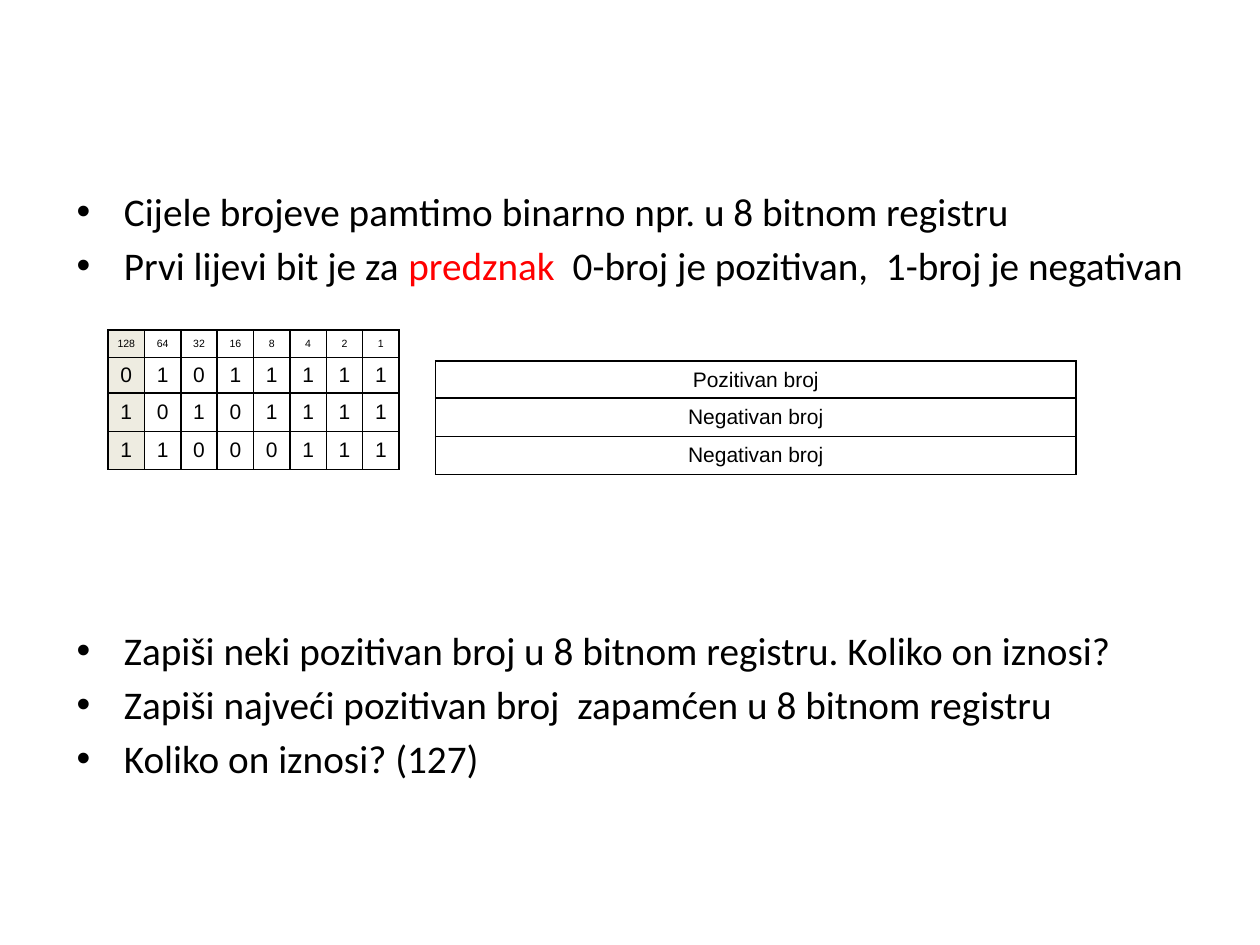
from lxml.etree import SubElement
from pptx import Presentation
from pptx.dml.color import RGBColor
from pptx.enum.text import MSO_ANCHOR, PP_ALIGN
from pptx.oxml.ns import qn
from pptx.util import Pt

BLACK = RGBColor(0x00, 0x00, 0x00)
RED = RGBColor(0xFF, 0x00, 0x00)
WHITE = RGBColor(0xFF, 0xFF, 0xFF)
BEIGE = RGBColor(0xEE, 0xEC, 0xE1)


class SlideBuilder:
    body_font, table_font = "Calibri", "Arial"
    body_size, indent = 22.4, 27
    border = 1

    def __init__(self, slide):
        self.s = slide

    def add_run(self, p, text, font, size, color=BLACK):
        r = p.add_run()
        r.text = text
        r.font.name = font
        r.font.size = Pt(size)
        r.font.color.rgb = color

    def bullets(self, left, top, width, height, items):
        """Each item is (space before, [(text, color), ...])."""
        tf = self.s.shapes.add_textbox(Pt(left), Pt(top), Pt(width), Pt(height)).text_frame
        tf.word_wrap = True
        for i, (space, runs) in enumerate(items):
            p = tf.add_paragraph() if i else tf.paragraphs[0]
            p.space_before = Pt(space)
            pPr = p._p.get_or_add_pPr()
            pPr.set("marL", str(Pt(self.indent)))
            pPr.set("indent", str(-Pt(self.indent)))
            SubElement(pPr, qn("a:buFont"), typeface="Arial")
            SubElement(pPr, qn("a:buChar"), char="•")
            for text, color in runs:
                self.add_run(p, text, self.body_font, self.body_size, color)

    def cell_borders(self, cell):
        tcPr = cell._tc.get_or_add_tcPr()
        for side in ("L", "R", "T", "B"):
            ln = SubElement(tcPr, qn(f"a:ln{side}"), w=str(Pt(self.border)))
            fill = SubElement(ln, qn("a:solidFill"))
            SubElement(fill, qn("a:srgbClr"), val=str(BLACK))

    def table(self, left, top, col_width, heights, rows, sizes, fills):
        """sizes has one entry per row, fills one per column (None is clear)."""
        cols = len(rows[0])
        frame = self.s.shapes.add_table(len(rows), cols, Pt(left), Pt(top),
                                        Pt(col_width * cols), Pt(sum(heights)))
        tbl = frame.table
        tbl.first_row = tbl.horz_banding = False
        for col in tbl.columns:
            col.width = Pt(col_width)
        for i, row in enumerate(rows):
            tbl.rows[i].height = Pt(heights[i])
            for j, value in enumerate(row):
                cell = tbl.cell(i, j)
                self.cell_borders(cell)
                if fills[j] is None:
                    cell.fill.background()
                else:
                    cell.fill.solid()
                    cell.fill.fore_color.rgb = fills[j]
                cell.vertical_anchor = MSO_ANCHOR.MIDDLE
                cell.margin_left = cell.margin_right = Pt(5)
                cell.margin_top = cell.margin_bottom = Pt(3)
                p = cell.text_frame.paragraphs[0]
                p.alignment = PP_ALIGN.CENTER
                self.add_run(p, str(value), self.table_font, sizes[i])


def main():
    prs = Presentation()
    prs.slide_width, prs.slide_height = Pt(720), Pt(540)
    b = SlideBuilder(prs.slides.add_slide(prs.slide_layouts[6]))

    # Bullets, with room for the tables after the second one
    gap, table_gap = 4.1, 192.7
    b.bullets(36.7, 103.7, 657.4, 335.5, [
        (gap, [("Cijele brojeve pamtimo binarno npr. u 8 bitnom registru", BLACK)]),
        (gap, [("Prvi lijevi bit je za ", BLACK), ("predznak", RED),
               ("  0-broj je pozitivan,  1-broj je negativan", BLACK)]),
        (table_gap, [("Zapiši neki pozitivan broj u 8 bitnom registru. Koliko on iznosi?", BLACK)]),
        (gap, [("Zapiši najveći pozitivan broj  zapamćen u 8 bitnom registru", BLACK)]),
        (gap, [("Koliko on iznosi? (127)", BLACK)]),
    ])

    # Register: place values above three bit patterns, sign bit shaded
    weights = [2 ** n for n in range(7, -1, -1)]
    b.table(61.8, 188.5, 20.8, [15.8, 20, 21.8, 21.8],
            [weights, "01011111", "10101111", "11000111"],
            [6, 12, 12, 12], [BEIGE] + [None] * 7)

    # Sign of each pattern
    b.table(248.9, 206.4, 366, [21.2, 21.8, 21.8],
            [["Pozitivan broj"], ["Negativan broj"], ["Negativan broj"]],
            [12] * 3, [WHITE])

    prs.save("out.pptx")


if __name__ == "__main__":
    main()
